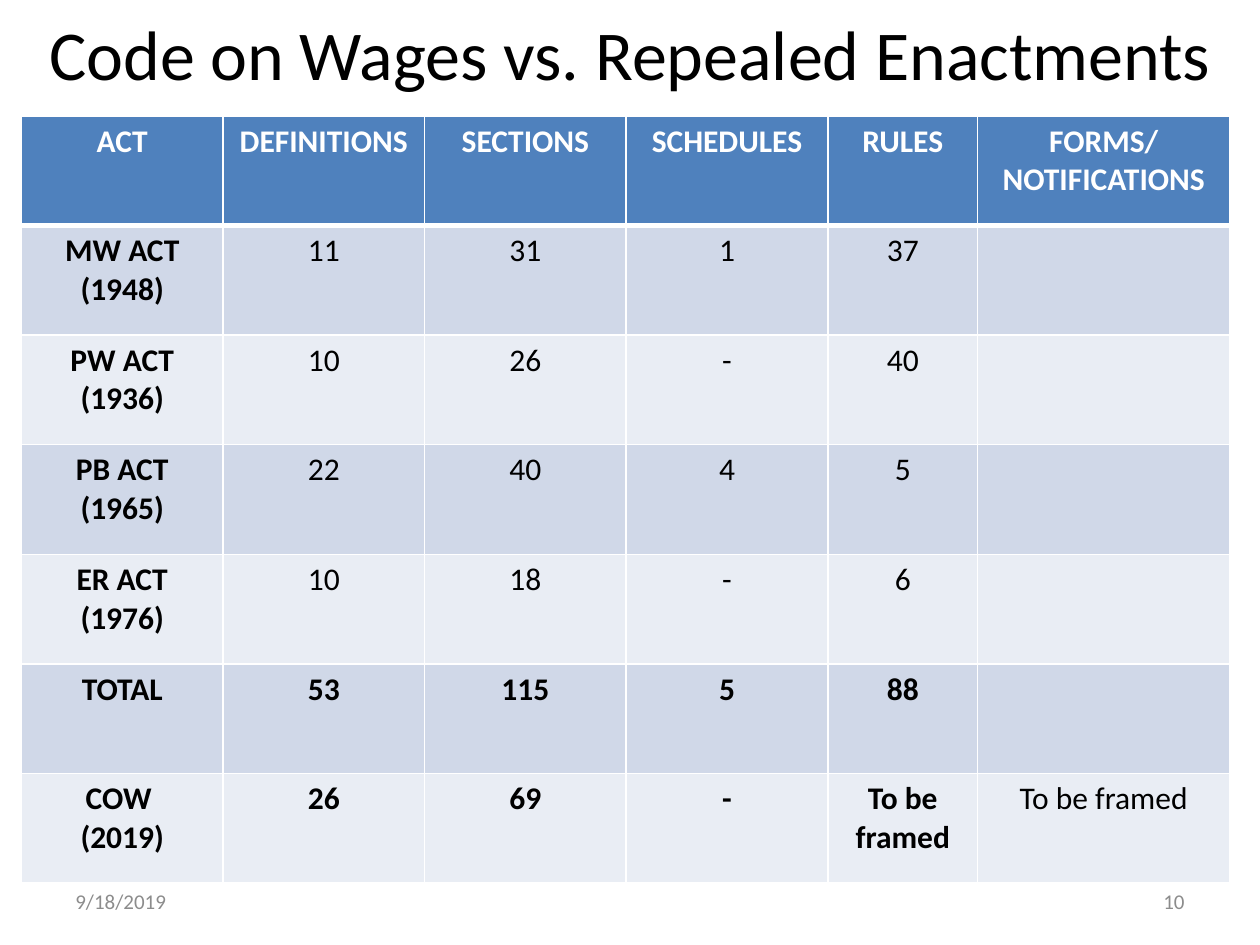
from lxml.etree import SubElement
from pptx import Presentation
from pptx.dml.color import RGBColor
from pptx.enum.text import MSO_ANCHOR, PP_ALIGN
from pptx.oxml.ns import qn
from pptx.util import Inches, Pt

FONT = "Calibri"
BLACK, WHITE, GREY = "000000", "FFFFFF", "8C8C8C"
HEADER_FILL, BAND_FILLS = "4F81BD", ("D0D8E8", "E9EDF4")
COLUMN_WIDTHS = (1.6, 1.6, 1.6, 1.6, 1.19, 2)
ROW_HEIGHT = 0.87
ROWS = (
    ("ACT", "DEFINITIONS", "SECTIONS", "SCHEDULES", "RULES", "FORMS/NOTIFICATIONS"),
    ("MW ACT\n(1948)", "11", "31", "1", "37", ""),
    ("PW ACT\n(1936)", "10", "26", "-", "40", ""),
    ("PB ACT\n(1965)", "22", "40", "4", "5", ""),
    ("ER ACT\n(1976)", "10", "18", "-", "6", ""),
    ("TOTAL", "53", "115", "5", "88", ""),
    ("COW \n(2019)", "26", "69", "-", "To be framed", "To be framed"),
)
TOTAL_ROW = 5
LAST_COLUMN = len(COLUMN_WIDTHS) - 1


def color(value):
    return RGBColor.from_string(value)


def write_text(text_frame, text, size, text_color, alignment, bold=False):
    text_frame.text = text
    for paragraph in text_frame.paragraphs:
        paragraph.alignment = alignment
        paragraph.font.size = Pt(size)
        for run in paragraph.runs:
            run.font.name = FONT
            run.font.size = Pt(size)
            run.font.bold = bold
            run.font.color.rgb = color(text_color)


def add_label(slide, text, box, size, text_color, alignment):
    shape = slide.shapes.add_textbox(*map(Inches, box))
    shape.text_frame.word_wrap = True
    shape.text_frame.vertical_anchor = MSO_ANCHOR.MIDDLE
    write_text(shape.text_frame, text, size, text_color, alignment)


def set_borders(cell, widths):
    properties = cell._tc.get_or_add_tcPr()
    for position, (side, width) in enumerate(widths.items()):
        line = properties.makeelement(qn(f"a:ln{side}"), {"w": str(Pt(width))})
        fill = SubElement(line, qn("a:solidFill"))
        SubElement(fill, qn("a:srgbClr"), val=WHITE)
        properties.insert(position, line)


def is_bold(row, column):
    return row == 0 or column == 0 or (row >= TOTAL_ROW and column < LAST_COLUMN)


def fill_cell(cell, text, row, column):
    header = row == 0
    cell.fill.solid()
    cell.fill.fore_color.rgb = color(HEADER_FILL if header else BAND_FILLS[(row - 1) % 2])
    write_text(cell.text_frame, text, 18, WHITE if header else BLACK,
               PP_ALIGN.CENTER, is_bold(row, column))
    set_borders(cell, {"L": 1, "R": 1, "T": 3 if row == 1 else 1, "B": 3 if header else 1})


def add_comparison_table(slide, left, top):
    table = slide.shapes.add_table(
        len(ROWS), len(COLUMN_WIDTHS), Inches(left), Inches(top),
        Inches(sum(COLUMN_WIDTHS)), Inches(ROW_HEIGHT * len(ROWS))).table
    for column, width in zip(table.columns, COLUMN_WIDTHS):
        column.width = Inches(width)
    for row, texts in enumerate(ROWS):
        table.rows[row].height = Inches(ROW_HEIGHT)
        for column, text in enumerate(texts):
            fill_cell(table.cell(row, column), text, row, column)


def main():
    presentation = Presentation()
    presentation.slide_width, presentation.slide_height = Inches(10), Inches(7.5)
    slide = presentation.slides.add_slide(presentation.slide_layouts[6])
    add_label(slide, "Code on Wages vs. Repealed Enactments", (0, 0, 10, 0.83),
              40, BLACK, PP_ALIGN.CENTER)
    add_comparison_table(slide, 0.17, 0.92)
    add_label(slide, "9/18/2019", (0.5, 6.95, 2.33, 0.4), 12, GREY, PP_ALIGN.LEFT)
    add_label(slide, "10", (7.17, 6.95, 2.33, 0.4), 12, GREY, PP_ALIGN.RIGHT)
    presentation.save("out.pptx")


if __name__ == "__main__":
    main()
